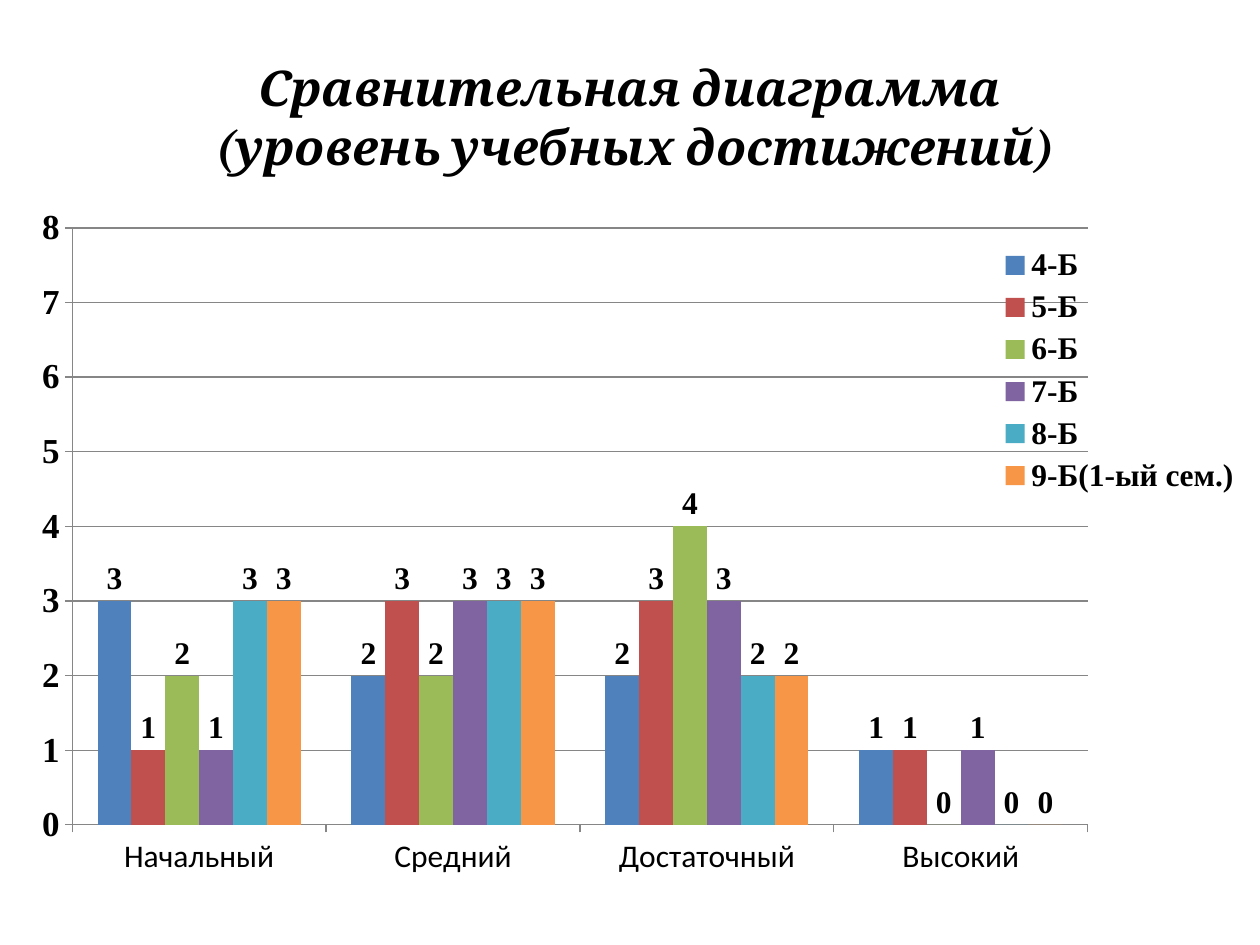
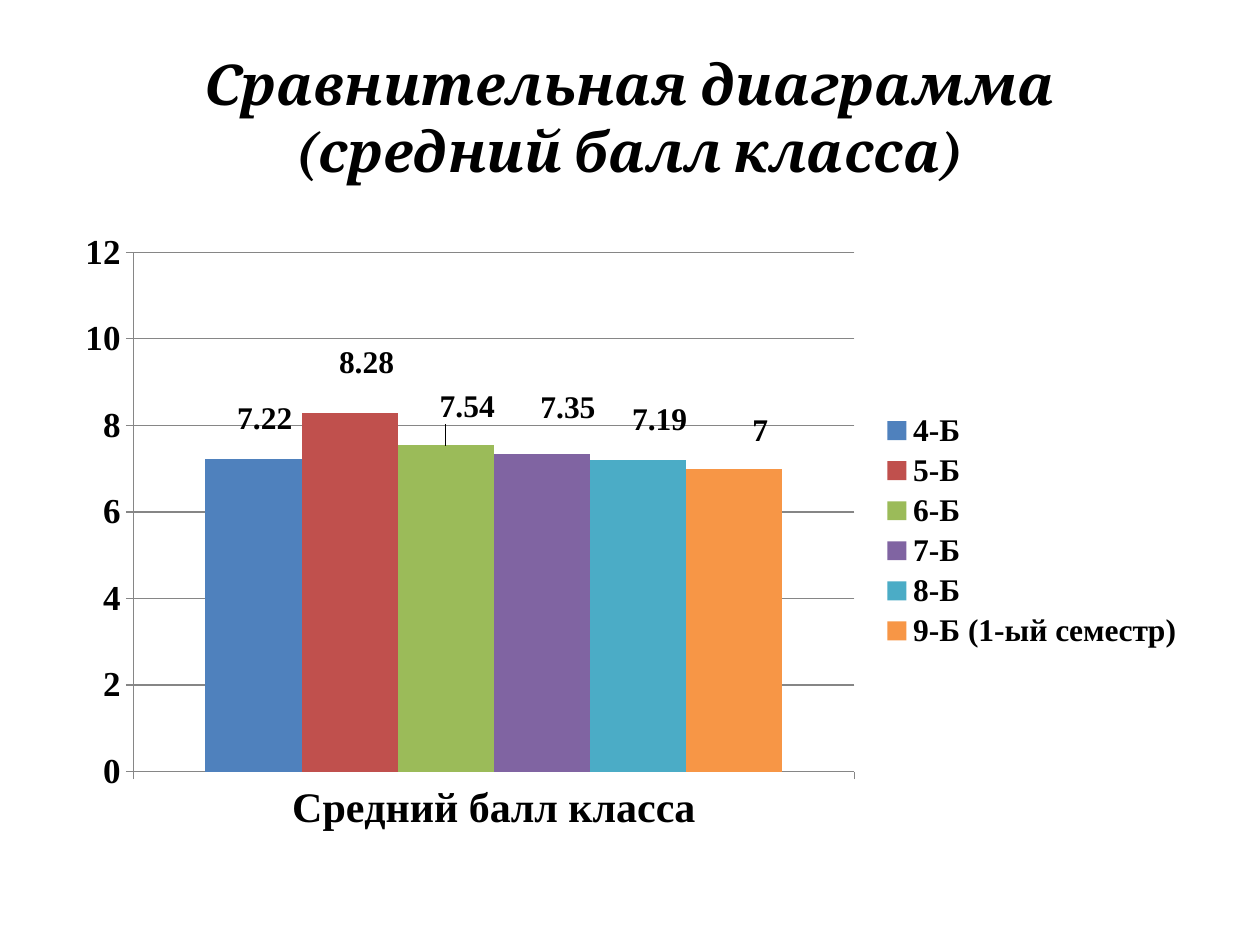
from lxml.etree import SubElement, fromstring
from pptx import Presentation
from pptx.chart.data import CategoryChartData
from pptx.dml.color import RGBColor
from pptx.enum.chart import XL_CHART_TYPE, XL_LABEL_POSITION, XL_LEGEND_POSITION, XL_TICK_MARK
from pptx.enum.text import MSO_ANCHOR, PP_ALIGN
from pptx.util import Inches, Pt

CHART_NS = "http://schemas.openxmlformats.org/drawingml/2006/chart"

BLACK = RGBColor(0x00, 0x00, 0x00)
AXIS_GRAY = RGBColor(0x86, 0x86, 0x86)
CLASS_COLORS = [
    RGBColor(0x4F, 0x81, 0xBD),
    RGBColor(0xC0, 0x50, 0x4D),
    RGBColor(0x9B, 0xBB, 0x59),
    RGBColor(0x80, 0x64, 0xA2),
    RGBColor(0x4B, 0xAC, 0xC6),
    RGBColor(0xF7, 0x96, 0x46),
]
TITLE_FONT, BODY_FONT, BOLD_FONT = "Cambria", "Calibri", "Times New Roman"
TITLE_BOX = (0.5, 0.3, 9, 1.25)

SLIDES = [
    {
        "title": "Сравнительная диаграмма\v (уровень учебных достижений)",
        "title_size": 28,
        "frame": (0.12, 1.55, 10.79, 5.51),
        "plot_percent": (4.2, 4.7, 74.7, 86),
        "legend_percent": (72.5, 6.5, 17.5, 37.5),
        "categories": ["Начальный", "Средний", "Достаточный", "Высокий"],
        "category_font": (BODY_FONT, 18, False),
        "maximum": 8,
        "step": 1,
        "series": [
            ("4-Б", [3, 2, 2, 1]),
            ("5-Б", [1, 3, 3, 1]),
            ("6-Б", [2, 2, 4, 0]),
            ("7-Б", [1, 3, 3, 1]),
            ("8-Б", [3, 3, 2, 0]),
            ("9-Б(1-ый сем.)", [3, 3, 2, 0]),
        ],
        "label_offsets_percent": {},
        "leader_series": None,
    },
    {
        "title": "Сравнительная диаграмма (средний балл класса)",
        "title_size": 32,
        "frame": (0.5, 1.75, 9, 4.95),
        "plot_percent": (6.2, 5.1, 63.6, 83.3),
        "legend_percent": (72.2, 30, 26.5, 39.5),
        "categories": ["Средний балл класса"],
        "category_font": (BOLD_FONT, 24, True),
        "maximum": 12,
        "step": 2,
        "series": [
            ("4-Б", [7.22]),
            ("5-Б", [8.28]),
            ("6-Б", [7.54]),
            ("7-Б", [7.35]),
            ("8-Б", [7.19]),
            ("9-Б (1-ый семестр)", [7]),
        ],
        "label_offsets_percent": {
            "4-Б": (1, -2.9),
            "5-Б": (1.5, -4.5),
            "6-Б": (1.9, -2.6),
            "7-Б": (2.3, -3.7),
            "8-Б": (1.9, -3),
            "9-Б (1-ый семестр)": (2.3, -2.6),
        },
        "leader_series": "6-Б",
    },
]


def style_font(font, name, size, bold=False):
    font.name, font.size, font.bold = name, Pt(size), bold
    font.color.rgb = BLACK


def place(element, position, percentages, absolute=True, inner=False):
    for stale in element.xpath("c:layout"):
        element.remove(stale)
    layout = fromstring(f'<c:layout xmlns:c="{CHART_NS}"><c:manualLayout/></c:layout>')
    settings = [("layoutTarget", "inner")] if inner else []
    if absolute:
        settings += [("xMode", "edge"), ("yMode", "edge")]
    settings += [(key, str(round(value / 100, 4))) for key, value in zip("xywh", percentages)]
    for tag, value in settings:
        SubElement(layout[0], f"{{{CHART_NS}}}{tag}", val=value)
    element.insert(position, layout)


def add_title(slide, text, size):
    box = slide.shapes.add_textbox(*map(Inches, TITLE_BOX))
    frame = box.text_frame
    frame.word_wrap = True
    frame.vertical_anchor = MSO_ANCHOR.MIDDLE
    frame.text = text
    paragraph = frame.paragraphs[0]
    paragraph.alignment = PP_ALIGN.CENTER
    for run in paragraph.runs:
        style_font(run.font, TITLE_FONT, size, True)
        run.font.italic = True


def style_axis(axis, font):
    style_font(axis.tick_labels.font, *font)
    axis.major_tick_mark = XL_TICK_MARK.OUTSIDE
    axis.minor_tick_mark = XL_TICK_MARK.NONE
    axis.format.line.color.rgb = AXIS_GRAY
    axis.format.line.width = Pt(0.75)


def add_labels(series, offset, has_leader):
    labels = series.data_labels
    labels.show_value = True
    labels.position = XL_LABEL_POSITION.OUTSIDE_END
    style_font(labels.font, BOLD_FONT, 18, True)
    if offset:
        label = series.points[0].data_label
        style_font(label.font, BOLD_FONT, 18, True)
        label.position = XL_LABEL_POSITION.OUTSIDE_END
        place(series._element.xpath("c:dLbls/c:dLbl")[0], 1, offset, absolute=False)
    for leader in series._element.xpath("c:dLbls/c:showLeaderLines"):
        leader.set("val", str(int(has_leader)))


def add_column_chart(slide, content):
    data = CategoryChartData()
    data.categories = content["categories"]
    for name, values in content["series"]:
        data.add_series(name, values)
    chart = slide.shapes.add_chart(
        XL_CHART_TYPE.COLUMN_CLUSTERED, *map(Inches, content["frame"]), data
    ).chart
    chart.has_title = False
    style_font(chart.font, BODY_FONT, 18)

    style_axis(chart.category_axis, content["category_font"])
    value_axis = chart.value_axis
    style_axis(value_axis, (BOLD_FONT, 20, True))
    value_axis.minimum_scale = 0
    value_axis.maximum_scale = content["maximum"]
    value_axis.major_unit = content["step"]
    value_axis.has_major_gridlines = True
    value_axis.major_gridlines.format.line.color.rgb = AXIS_GRAY
    value_axis.major_gridlines.format.line.width = Pt(0.75)

    plot = chart.plots[0]
    plot.gap_width = 150
    plot.overlap = 0
    plot.vary_by_categories = False
    for series, color in zip(plot.series, CLASS_COLORS):
        series.format.fill.solid()
        series.format.fill.fore_color.rgb = color
        offset = content["label_offsets_percent"].get(series.name)
        add_labels(series, offset, series.name == content["leader_series"])

    chart.has_legend = True
    chart.legend.position = XL_LEGEND_POSITION.RIGHT
    chart.legend.include_in_layout = False
    style_font(chart.legend.font, BOLD_FONT, 18, True)
    plot_area = chart._chartSpace.xpath("c:chart/c:plotArea")[0]
    place(plot_area, 0, content["plot_percent"], inner=True)
    place(chart._chartSpace.xpath("c:chart/c:legend")[0], 1, content["legend_percent"])


def main():
    presentation = Presentation()
    presentation.slide_width, presentation.slide_height = Inches(10), Inches(7.5)
    for content in SLIDES:
        slide = presentation.slides.add_slide(presentation.slide_layouts[6])
        add_title(slide, content["title"], content["title_size"])
        add_column_chart(slide, content)
    presentation.save("out.pptx")


if __name__ == "__main__":
    main()
